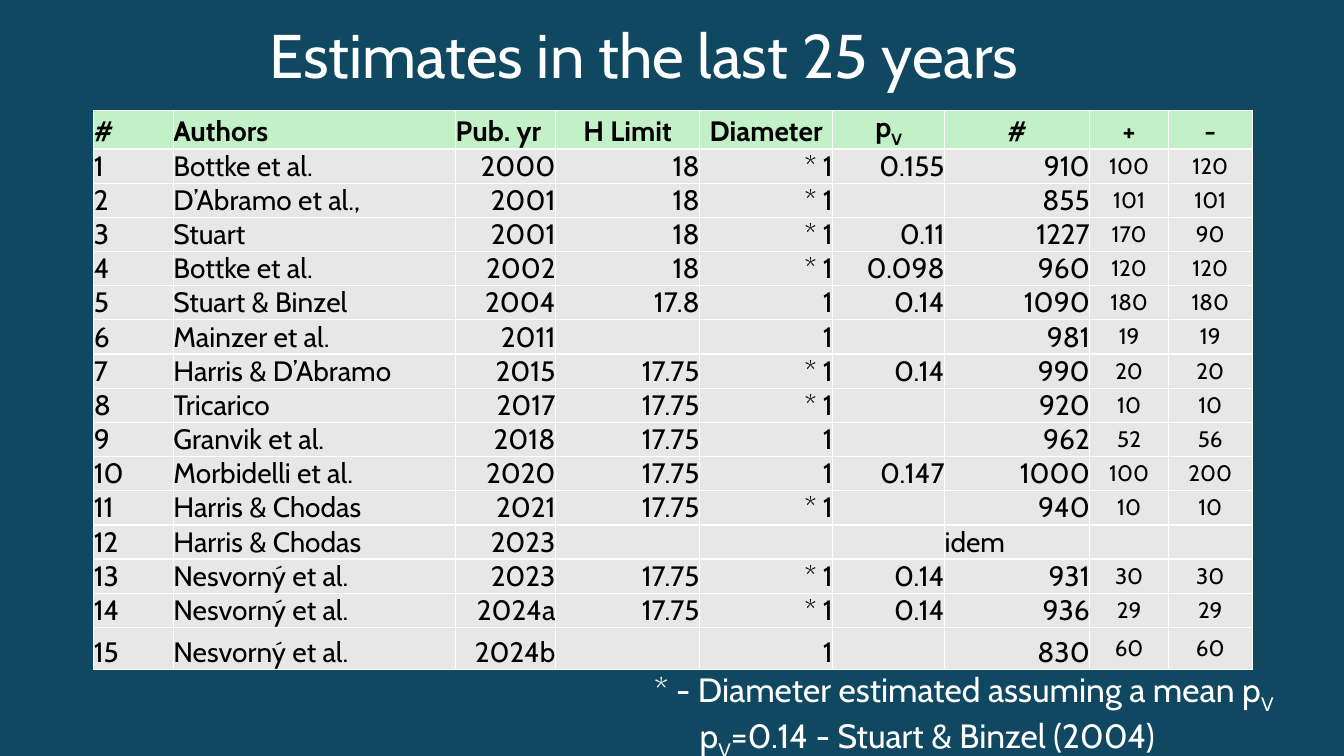
from lxml import etree
from pptx import Presentation
from pptx.dml.color import RGBColor
from pptx.enum.text import MSO_ANCHOR, PP_ALIGN
from pptx.oxml.ns import qn
from pptx.util import Inches, Pt

LEFT, CENTER, RIGHT = PP_ALIGN.LEFT, PP_ALIGN.CENTER, PP_ALIGN.RIGHT
BOTTOM, MIDDLE = MSO_ANCHOR.BOTTOM, MSO_ANCHOR.MIDDLE

# Text between bars is set as a subscript.
TITLE = "Estimates in the last 25 years"
HEADER = ("#", "Authors", "Pub. yr", "H Limit", "Diameter", "p|V|", "#", "+", "-")
ESTIMATES = [
    ("Bottke et al.", "2000", "18", "* 1", "0.155", "910", "100", "120"),
    ("D’Abramo et al.,", "2001", "18", "* 1", "", "855", "101", "101"),
    ("Stuart", "2001", "18", "* 1", "0.11", "1227", "170", "90"),
    ("Bottke et al.", "2002", "18", "* 1", "0.098", "960", "120", "120"),
    ("Stuart & Binzel", "2004", "17.8", "1", "0.14", "1090", "180", "180"),
    ("Mainzer et al.", "2011", "", "1", "", "981", "19", "19"),
    ("Harris & D’Abramo", "2015", "17.75", "* 1", "0.14", "990", "20", "20"),
    ("Tricarico", "2017", "17.75", "* 1", "", "920", "10", "10"),
    ("Granvik et al.", "2018", "17.75", "1", "", "962", "52", "56"),
    ("Morbidelli et al.", "2020", "17.75", "1", "0.147", "1000", "100", "200"),
    ("Harris & Chodas", "2021", "17.75", "* 1", "", "940", "10", "10"),
    ("Harris & Chodas", "2023", "", "", "", "idem", "", ""),
    ("Nesvorný et al.", "2023", "17.75", "* 1", "0.14", "931", "30", "30"),
    ("Nesvorný et al.", "2024a", "17.75", "* 1", "0.14", "936", "29", "29"),
    ("Nesvorný et al.", "2024b", "", "1", "", "830", "60", "60"),
]
FOOTNOTES = [
    ("* - Diameter estimated assuming a mean p|V|", 0),
    ("p|V|=0.14 - Stuart & Binzel (2004)", 0.45),
]

COLUMN_WIDTHS = (0.79, 2.8, 0.99, 1.43, 1.32, 1.11, 1.44, 0.78, 0.83)
ROW_HEIGHT, LAST_ROW_HEIGHT = 0.33, 0.42
HEADER_ALIGNMENTS = (LEFT,) * 3 + (CENTER,) * 6
BODY_ALIGNMENTS = (LEFT,) * 2 + (RIGHT,) * 5 + (CENTER,) * 2
FIRST_ERROR_COLUMN = 7

TITLE_FORMAT = {"size": Pt(44), "name": "Cabin"}
HEADER_FORMAT = {"size": Pt(20), "name": "Cabin", "bold": True}
BODY_FORMAT = {"size": Pt(20), "name": "Cabin", "bold": False}
ERROR_FORMAT = {"size": Pt(16), "name": "Cabin", "bold": False}
FOOTNOTE_FORMAT = {"size": Pt(24), "name": "Cabin"}
NAVY, GREEN, GRAY, WHITE, BLACK = "104862", "C2F1C8", "E7E7E7", "FFFFFF", "000000"


def paint(fill, color):
    fill.solid()
    fill.fore_color.rgb = RGBColor.from_string(color)


def write(paragraph, text, format_values, color, alignment=LEFT):
    paragraph.alignment = alignment
    for index, piece in enumerate(text.split("|")):
        if not piece:
            continue
        run = paragraph.add_run()
        run.text = piece
        for name, value in format_values.items():
            setattr(run.font, name, value)
        paint(run.font.fill, color)
        if index % 2:
            run.font._element.set("baseline", "-25000")


def add_borders(cell, color, width):
    properties = cell._tc.get_or_add_tcPr()
    for index, side in enumerate(("a:lnL", "a:lnR", "a:lnT", "a:lnB")):
        line = etree.Element(qn(side), w=str(width))
        fill = etree.SubElement(line, qn("a:solidFill"))
        etree.SubElement(fill, qn("a:srgbClr"), val=color)
        properties.insert(index, line)


def fill_cell(cell, text, row, column):
    is_error = row > 0 and column >= FIRST_ERROR_COLUMN
    if row == 0:
        format_values, alignment = HEADER_FORMAT, HEADER_ALIGNMENTS[column]
    else:
        format_values = ERROR_FORMAT if is_error else BODY_FORMAT
        alignment = LEFT if text == "idem" else BODY_ALIGNMENTS[column]
    for side in ("left", "right", "top", "bottom"):
        setattr(cell, f"margin_{side}", 0)
    cell.vertical_anchor = MIDDLE if is_error else BOTTOM
    paint(cell.fill, GRAY if row else GREEN)
    add_borders(cell, WHITE, Pt(1))
    write(cell.text_frame.paragraphs[0], text, format_values, BLACK, alignment)


def add_estimates(slide):
    rows = [HEADER] + [(str(number), *estimate) for number, estimate in enumerate(ESTIMATES, 1)]
    heights = [ROW_HEIGHT] * (len(rows) - 1) + [LAST_ROW_HEIGHT]
    table = slide.shapes.add_table(
        len(rows), len(HEADER), Inches(0.93), Inches(1.1),
        Inches(sum(COLUMN_WIDTHS)), Inches(sum(heights))).table
    table.horz_banding = False
    for column, width in zip(table.columns, COLUMN_WIDTHS):
        column.width = Inches(width)
    for row, height in zip(table.rows, heights):
        row.height = Inches(height)
    for row, texts in enumerate(rows):
        for column, text in enumerate(texts):
            fill_cell(table.cell(row, column), text, row, column)


def add_footnotes(slide):
    box = slide.shapes.add_textbox(Inches(6.39), Inches(6.59), Inches(6.49), Inches(0.91))
    frame = box.text_frame
    frame.word_wrap = True
    for index, (text, indent) in enumerate(FOOTNOTES):
        paragraph = frame.add_paragraph() if index else frame.paragraphs[0]
        write(paragraph, text, FOOTNOTE_FORMAT, WHITE)
        paragraph._p.get_or_add_pPr().set("marL", str(Inches(indent)))


def add_title(slide):
    title = slide.shapes.title
    title.left, title.top = Inches(0.64), Inches(-0.14)
    title.width, title.height = Inches(11.5), Inches(1.45)
    title.text_frame.vertical_anchor = MIDDLE
    paragraph = title.text_frame.paragraphs[0]
    paragraph.line_spacing = 0.9
    write(paragraph, TITLE, TITLE_FORMAT, WHITE, CENTER)


def main():
    presentation = Presentation()
    presentation.slide_width, presentation.slide_height = Inches(13.33), Inches(7.5)
    slide = presentation.slides.add_slide(presentation.slide_layouts[5])
    paint(slide.background.fill, NAVY)
    add_title(slide)
    add_estimates(slide)
    add_footnotes(slide)
    presentation.save("out.pptx")


if __name__ == "__main__":
    main()
